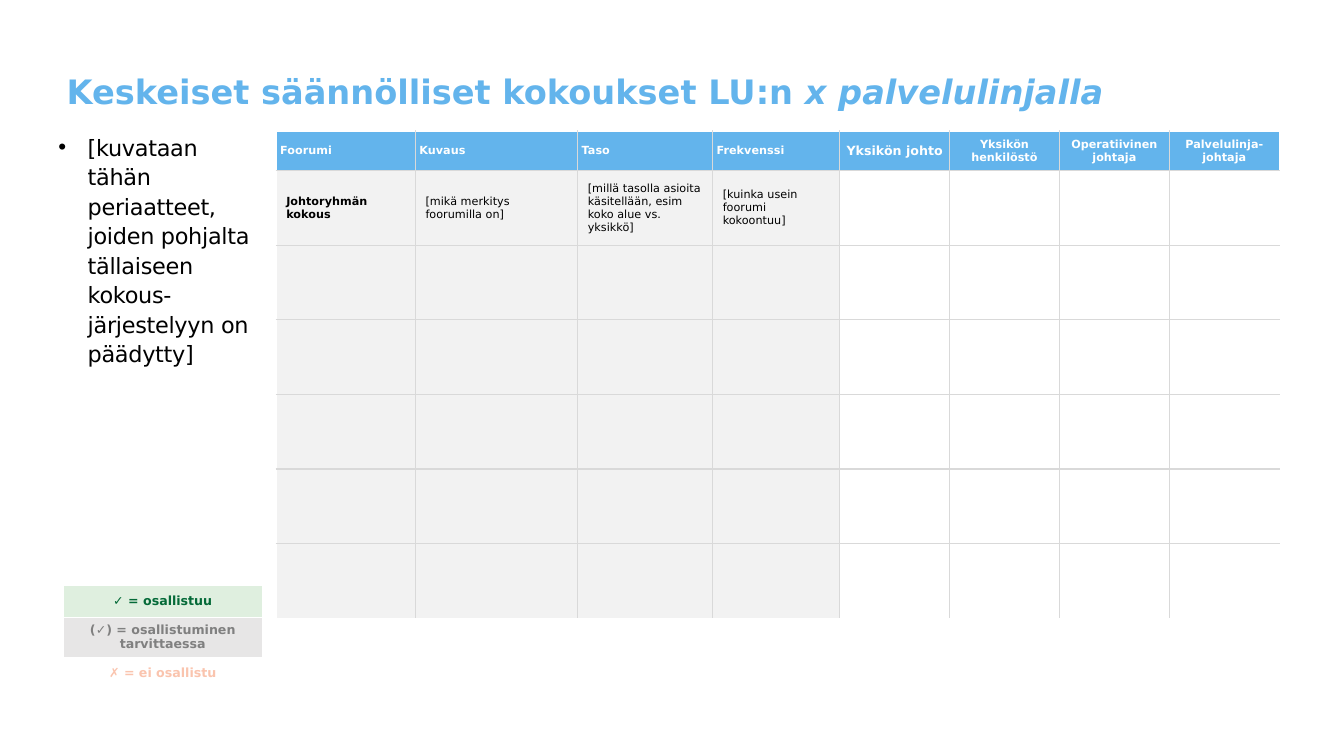
from lxml.etree import SubElement
from pptx import Presentation
from pptx.dml.color import RGBColor
from pptx.enum.text import MSO_ANCHOR, MSO_AUTO_SIZE, PP_ALIGN
from pptx.oxml.ns import qn
from pptx.util import Cm, Pt

FONT = "DejaVu Sans"
BLUE, WHITE, BLACK = "63B4EC", "FFFFFF", "000000"
LIGHT_GREY, LINE_GREY = "F2F2F2", "D9D9D9"

FORUM_HEADERS = ["Foorumi", "Kuvaus", "Taso", "Frekvenssi"]
ROLE_HEADERS = ["Yksikön johto", "Yksikön henkilöstö",
                "Operatiivinen johtaja", "Palvelulinja-johtaja"]
FORUM_TEXTS = ["Johtoryhmän kokous", "[mikä merkitys foorumilla on]",
               "[millä tasolla asioita käsitellään, esim koko alue vs. yksikkö]",
               "[kuinka usein foorumi kokoontuu]"]
LEGEND = [("✓ = osallistuu", "046A38", "DFEFDF"),
          ("(✓) = osallistuminen tarvittaessa", "808080", "E7E6E6"),
          ("✗ = ei osallistu", "FAC4AE", None)]


def color(value):
    return RGBColor.from_string(value)


def format_runs(paragraph, size, text_color, bold=False):
    for run in paragraph.runs:
        run.font.name = FONT
        run.font.size = Pt(size)
        run.font.bold = bold
        run.font.color.rgb = color(text_color)


def place_placeholder(shape, left, top, width, height):
    shape.left, shape.top = Cm(left), Cm(top)
    shape.width, shape.height = Cm(width), Cm(height)
    frame = shape.text_frame
    frame.margin_left = frame.margin_right = 0
    frame.margin_top = frame.margin_bottom = 0
    frame.vertical_anchor = MSO_ANCHOR.TOP
    frame.auto_size = MSO_AUTO_SIZE.NONE
    frame.word_wrap = True
    paragraph = frame.paragraphs[0]
    paragraph.alignment = PP_ALIGN.LEFT
    paragraph.line_spacing = 1.1
    paragraph.space_before = Pt(0)
    return paragraph


def add_plain_table(slide, left, top, widths, heights):
    frame = slide.shapes.add_table(len(heights), len(widths), Cm(left), Cm(top),
                                   Cm(sum(widths)), Cm(sum(heights)))
    table = frame.table
    table.first_row = table.horz_banding = False
    for column, width in zip(table.columns, widths):
        column.width = Cm(width)
    for row, height in zip(table.rows, heights):
        row.height = Cm(height)
    return table


def style_cell(cell, fill, borders, line_width):
    """Borders are colours in the order left, right, top, bottom."""
    properties = cell._tc.get_or_add_tcPr()
    for side, border in zip("LRTB", borders):
        line = SubElement(properties, qn(f"a:ln{side}"), w=str(Pt(line_width)))
        SubElement(SubElement(line, qn("a:solidFill")), qn("a:srgbClr"), val=border)
    if fill:
        cell.fill.solid()
        cell.fill.fore_color.rgb = color(fill)
    else:
        cell.fill.background()
    cell.vertical_anchor = MSO_ANCHOR.MIDDLE


def write_cell(cell, text, size, text_color, bold=True, centered=False):
    cell.text_frame.text = text
    paragraph = cell.text_frame.paragraphs[0]
    paragraph.alignment = PP_ALIGN.CENTER if centered else PP_ALIGN.LEFT
    format_runs(paragraph, size, text_color, bold)


def set_margins(cell, left, others):
    cell.margin_left = Cm(left)
    cell.margin_right = cell.margin_top = cell.margin_bottom = Cm(others)


def add_title(slide):
    paragraph = place_placeholder(slide.shapes.title, 1.68, 1.68, 30.5, 1.42)
    paragraph.text = "Keskeiset säännölliset kokoukset LU:n "
    paragraph.add_run().text = "x palvelulinjalla"
    format_runs(paragraph, 24, BLUE, bold=True)
    paragraph.runs[1].font.italic = True


def add_principles(slide):
    paragraph = place_placeholder(slide.placeholders[1], 1.47, 3.3, 5.26, 11)
    paragraph.text = ("[kuvataan tähän periaatteet, joiden pohjalta tällaiseen "
                      "kokous-järjestelyyn on päädytty]")
    properties = paragraph._p.get_or_add_pPr()
    properties.set("marL", str(Cm(0.74)))
    properties.set("indent", str(-Cm(0.74)))
    SubElement(properties, qn("a:buFont"), typeface="Arial")
    SubElement(properties, qn("a:buChar"), char="•")
    format_runs(paragraph, 16, BLACK)
    paragraph.runs[0]._r.get_or_add_rPr().set("spc", "-20")


def add_meeting_table(slide):
    widths = [3.51, 4.09, 3.4, 3.2] + [2.77] * 4
    heights = [1] + [1.88] * 6
    table = add_plain_table(slide, 6.96, 3.3, widths, heights)
    last_row, last_column = len(heights) - 1, len(widths) - 1
    forum_count = len(FORUM_HEADERS)

    # Grey grid with a white outer edge
    for row in range(len(heights)):
        for column in range(len(widths)):
            outer = (column == 0, column == last_column, row == 0, row == last_row)
            borders = [WHITE if edge else LINE_GREY for edge in outer]
            body_fill = LIGHT_GREY if column < forum_count else None
            style_cell(table.cell(row, column), body_fill if row else BLUE, borders, 1)

    # Header row
    for column, text in enumerate(FORUM_HEADERS + ROLE_HEADERS):
        is_role = column >= forum_count
        cell = table.cell(0, column)
        set_margins(cell, 0.05 if is_role else 0.1, 0.05)
        size = 9 if column == forum_count else 8
        write_cell(cell, text, size, WHITE, centered=is_role)

    # First forum
    for column, text in enumerate(FORUM_TEXTS):
        write_cell(table.cell(1, column), text, 8, BLACK, bold=column == 0)


def add_legend(slide):
    table = add_plain_table(slide, 1.6, 14.76, [5], [0.79] * len(LEGEND))
    for row, (text, text_color, fill) in enumerate(LEGEND):
        cell = table.cell(row, 0)
        style_cell(cell, fill, [WHITE] * 4, 0.5)
        set_margins(cell, 0.13, 0.13)
        write_cell(cell, text, 9, text_color, centered=True)


def main():
    presentation = Presentation()
    presentation.slide_width, presentation.slide_height = Cm(33.87), Cm(19.05)
    slide = presentation.slides.add_slide(presentation.slide_layouts[1])
    add_title(slide)
    add_meeting_table(slide)
    add_legend(slide)
    add_principles(slide)
    presentation.save("out.pptx")


if __name__ == "__main__":
    main()
